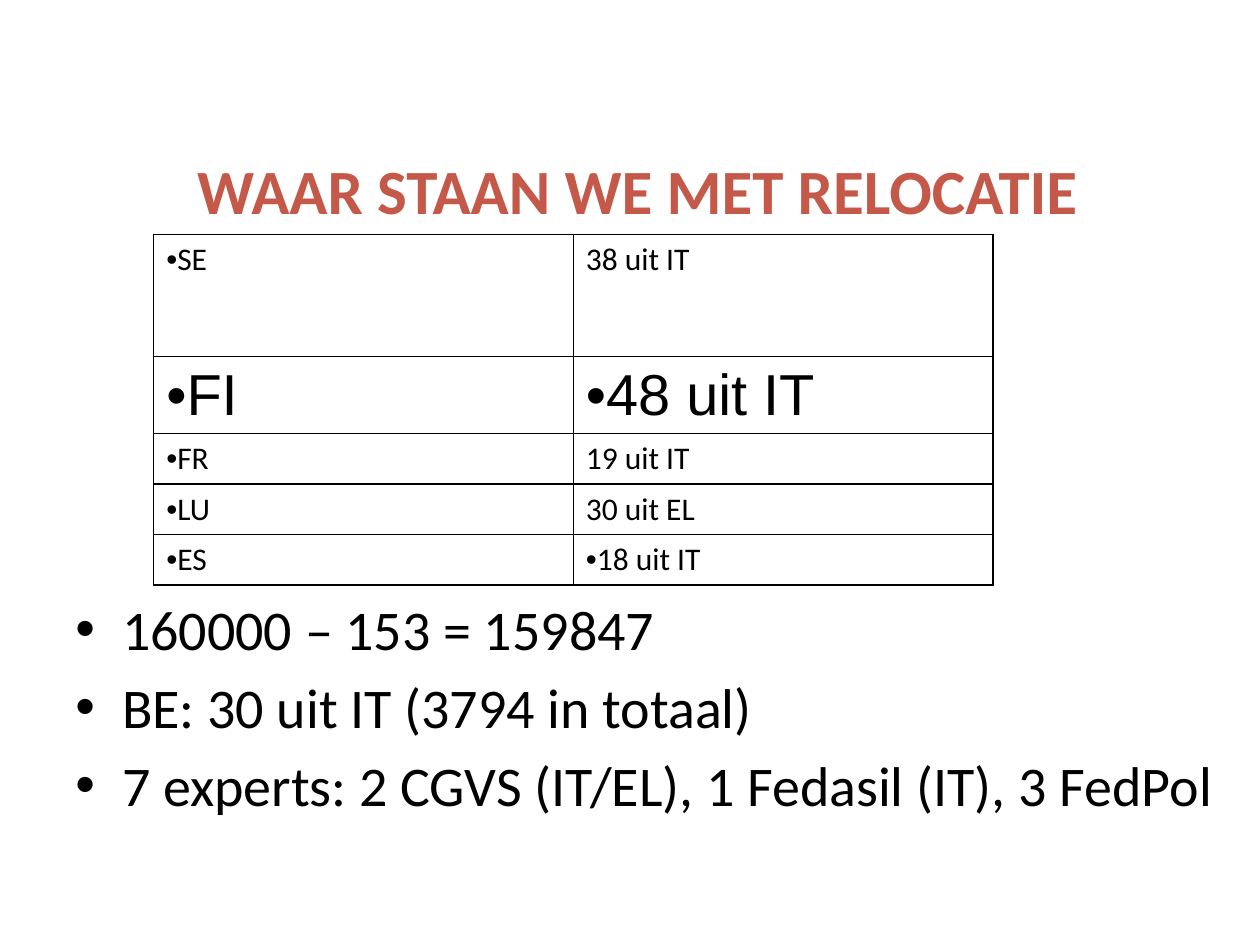
"""Build the slide on the state of relocation: title, table and key figures."""
import pptx
import pptx.dml.color
import pptx.enum.text
import pptx.oxml
import pptx.oxml.ns
import pptx.util
from lxml import etree

Inches = pptx.util.Inches
Pt = pptx.util.Pt
COLORS = {"title": "C4594A", "text": "000000", "line": "000000"}


def write(para, text, size=18, font="Calibri", color="text", bold=False,
          bullet=False, indent=0, before=0, align=None):
    if bullet:
        props = para._p.get_or_add_pPr()
        props.set("marL", str(Inches(indent)))
        props.set("indent", str(-Inches(indent)))
        for tag, key, value in (("a:buFont", "typeface", "Arial"),
                                ("a:buChar", "char", "•")):
            etree.SubElement(props, pptx.oxml.ns.qn(tag)).set(key, value)
    para.space_before = Pt(before)
    para.alignment = align
    run = para.add_run()
    run.text = text
    run.font.size = Pt(size)
    run.font.name = font
    run.font.bold = bold
    run.font.color.rgb = pptx.dml.color.RGBColor.from_string(COLORS[color])


def edge(cell):
    props = cell._tc.get_or_add_tcPr()
    for place, side in enumerate(("lnL", "lnR", "lnT", "lnB")):
        props.insert(place, pptx.oxml.parse_xml(
            f'<a:{side} {pptx.oxml.ns.nsdecls("a")} w="{Pt(1)}"><a:solidFill>'
            f'<a:srgbClr val="{COLORS["line"]}"/></a:solidFill></a:{side}>'))


deck = pptx.Presentation()
deck.slide_width, deck.slide_height = Inches(10), Inches(7.5)
slide = deck.slides.add_slide(deck.slide_layouts[5])

title = slide.shapes.title
title.left, title.top = Inches(0.56), Inches(1.23)
title.width, title.height = Inches(9), Inches(0.55)
title.text_frame.vertical_anchor = pptx.enum.text.MSO_ANCHOR.MIDDLE
write(title.text_frame.paragraphs[0], "WAAR STAAN WE MET RELOCATIE", size=36,
      color="title", bold=True, align=pptx.enum.text.PP_ALIGN.CENTER)

points = ["160000 – 153 = 159847", "BE: 30 uit IT (3794 in totaal)",
          "7 experts: 2 CGVS (IT/EL), 1 Fedasil (IT), 3 FedPol"]
body = slide.shapes.add_textbox(Inches(0.5), Inches(4.67), Inches(9.38), Inches(2))
frame = body.text_frame
frame.word_wrap = True
for index, point in enumerate(points):
    para = frame.add_paragraph() if index else frame.paragraphs[0]
    write(para, point, size=32, bullet=True, indent=0.37,
          before=6.2 if index else 0)

rows = [("SE", "38 uit IT", 0.97), ("FI", "48 uit IT", 0.61),
        ("FR", "19 uit IT", 0.4), ("LU", "30 uit EL", 0.4),
        ("ES", "18 uit IT", 0.4)]
holder = slide.shapes.add_table(len(rows), 2, Inches(1.22), Inches(1.86),
                                Inches(6.66), Inches(2.78))
table = holder.table
table.first_row = table.horz_banding = False
for index, (land, count, height) in enumerate(rows):
    table.rows[index].height = Inches(height)
    large = land == "FI"
    for col, text in enumerate((land, count)):
        cell = table.cell(index, col)
        cell.fill.background()
        cell.margin_bottom = Inches(0.01 if large else 0.05)
        edge(cell)
        write(cell.text_frame.paragraphs[0], text, size=33 if large else 18,
              font="Arial" if large else "Calibri",
              bullet=col == 0 or land in ("FI", "ES"))

deck.save("out.pptx")
